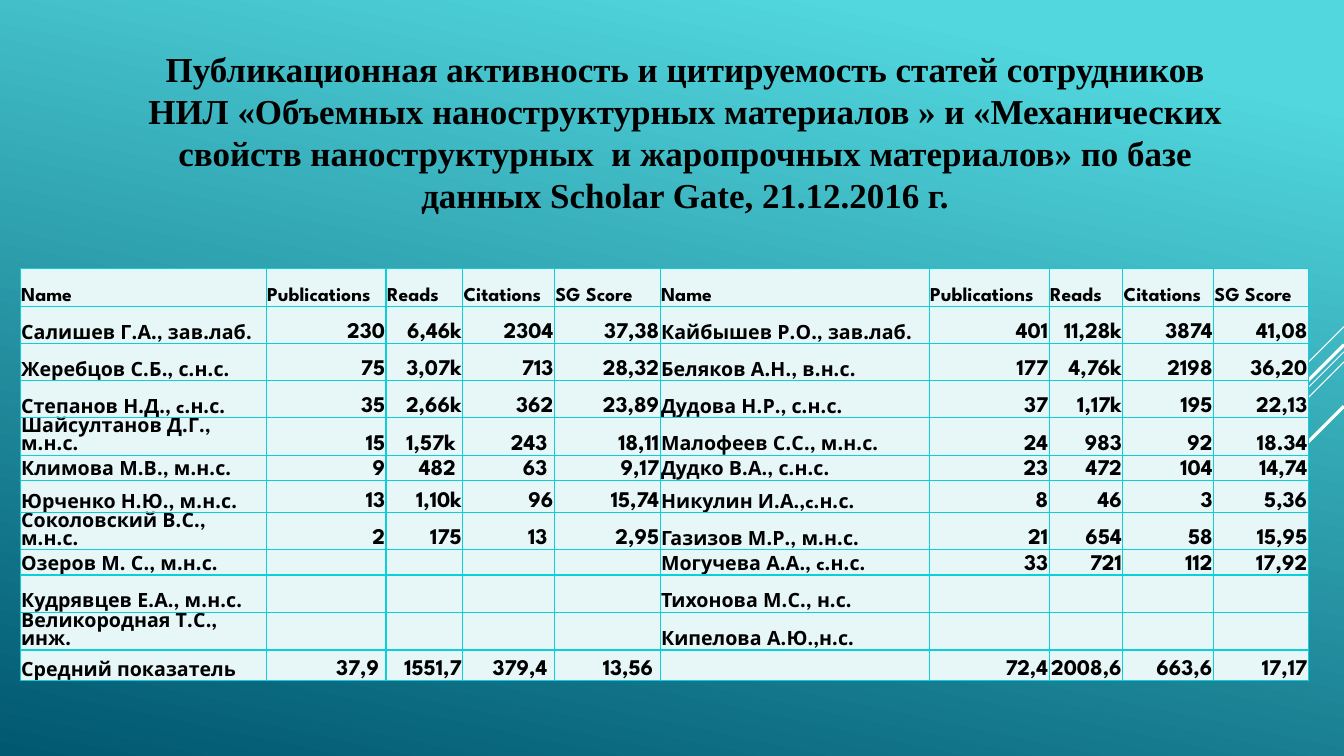
from lxml import etree
from pptx import Presentation
from pptx.dml.color import RGBColor
from pptx.enum import shapes, text
from pptx.oxml import ns
from pptx.util import Pt

COLORS = {
    "sky": "52D7DE",
    "deep": "005870",
    "line": "FFFFFF",
    "text": "000000",
    "cell": "E7F7F8",
    "border": "0BD0D9",
}
TITLE_FONT = "Times New Roman"
TABLE_FONT = "League Spartan"
TITLE = (
    "Публикационная активность и цитируемость статей сотрудников "
    "НИЛ «Объемных наноструктурных материалов » и «Механических "
    "свойств наноструктурных  и жаропрочных материалов» по базе "
    "данных Scholar Gate, 21.12.2016 г."
)
RIGHT_EDGE = 960
# Start height at the right edge, run of the 45° diagonal, line width
DIAGONALS = [
    (233.3, 72, 0.75),
    (251.3, 234.7, 0.75),
    (258.5, 149, 0.75),
    (246.2, 137.5, 2.25),
    (290.2, 100, 2.25),
]
COLUMN_WIDTHS = [175.7, 85.7, 54.7, 65.5, 75.6, 192.2, 85.7, 52.6, 64.8, 67.7]
ROW_HEIGHTS = [27.2, 26.6, 26.6, 26.6, 26.6, 17.9, 23.2, 26, 17.9, 26.6, 27, 21.8]
NAME_COLUMNS = (0, 5)
HEADINGS = ["Name", "Publications", "Reads", "Citations", "SG Score"]
NO_DATA = [""] * 4
ROWS = [
    HEADINGS * 2,
    ["Салишев Г.А., зав.лаб.", "230", "6,46k", "2304", "37,38",
     "Кайбышев Р.О., зав.лаб.", "401", "11,28k", "3874", "41,08"],
    ["Жеребцов С.Б., с.н.с.", "75", "3,07k", "713", "28,32",
     "Беляков А.Н., в.н.с.", "177", "4,76k", "2198", "36,20"],
    ["Степанов Н.Д., c.н.с.", "35", "2,66k", "362", "23,89",
     "Дудова Н.Р., с.н.с.", "37", "1,17k", "195", "22,13"],
    ["Шайсултанов Д.Г., м.н.с.", "15", "1,57k ", "243 ", "18,11",
     "Малофеев С.С., м.н.с.", "24", "983", "92", "18.34"],
    ["Климова М.В., м.н.с.", "9", "482 ", "63 ", "9,17",
     "Дудко В.А., с.н.с.", "23", "472", "104", "14,74"],
    ["Юрченко Н.Ю., м.н.с.", "13", "1,10k", "96", "15,74",
     "Никулин И.А.,c.н.с.", "8", "46", "3", "5,36"],
    ["Соколовский В.С., м.н.с.", "2", "175", "13 ", "2,95",
     "Газизов М.Р., м.н.с.", "21", "654", "58", "15,95"],
    ["Озеров М. С., м.н.с.", *NO_DATA,
     "Могучева А.А., c.н.с.", "33", "721", "112", "17,92"],
    ["Кудрявцев Е.А., м.н.с.", *NO_DATA, "Тихонова М.С., н.с.", *NO_DATA],
    ["Великородная Т.С., инж.", *NO_DATA, "Кипелова А.Ю.,н.с.", *NO_DATA],
    ["Средний показатель", "37,9 ", "1551,7", "379,4 ", "13,56 ",
     "", "72,4", "2008,6", "663,6", "17,17"],
]


def color(name):
    return RGBColor.from_string(COLORS[name])


def format_runs(paragraph, font_name, size):
    for run in paragraph.runs:
        run.font.name = font_name
        run.font.size = Pt(size)
        run.font.bold = True
        run.font.color.rgb = color("text")


def set_background(slide):
    fill = slide.background.fill
    fill.gradient()
    fill.gradient_angle = 258
    for stop, (position, name) in zip(fill.gradient_stops, [(0.1, "sky"), (1, "deep")]):
        stop.position = position
        stop.color.rgb = color(name)


def add_diagonal(slide, top, run, width):
    connector = slide.shapes.add_connector(
        shapes.MSO_CONNECTOR.STRAIGHT,
        Pt(RIGHT_EDGE), Pt(top), Pt(RIGHT_EDGE - run), Pt(top + run),
    )
    connector.line.color.rgb = color("line")
    connector.line.width = Pt(width)
    etree.SubElement(connector._element.spPr, ns.qn("a:effectLst"))


def fill_title(slide):
    title = slide.shapes.title
    title.left, title.top, title.width, title.height = Pt(88.6), Pt(34.6), Pt(801.4), Pt(118.8)
    frame = title.text_frame
    frame.text = TITLE
    frame.word_wrap = True
    frame.auto_size = text.MSO_AUTO_SIZE.NONE
    frame.vertical_anchor = text.MSO_ANCHOR.MIDDLE
    paragraph = frame.paragraphs[0]
    paragraph.alignment = text.PP_ALIGN.CENTER
    format_runs(paragraph, TITLE_FONT, 25)


def set_borders(cell):
    properties = cell._tc.get_or_add_tcPr()
    for index, side in enumerate(("lnL", "lnR", "lnT", "lnB")):
        border = etree.Element(ns.qn(f"a:{side}"), w=str(Pt(1)))
        fill = etree.SubElement(border, ns.qn("a:solidFill"))
        etree.SubElement(fill, ns.qn("a:srgbClr"), val=COLORS["border"])
        properties.insert(index, border)


def fill_cell(cell, value, size, alignment):
    cell.text_frame.text = value
    cell.vertical_anchor = text.MSO_ANCHOR.BOTTOM
    cell.margin_left = cell.margin_right = cell.margin_top = Pt(0.7)
    cell.margin_bottom = 0
    cell.fill.solid()
    cell.fill.fore_color.rgb = color("cell")
    set_borders(cell)
    paragraph = cell.text_frame.paragraphs[0]
    paragraph.alignment = alignment
    format_runs(paragraph, TABLE_FONT, size)
    if not value:
        end = etree.SubElement(paragraph._p, ns.qn("a:endParaRPr"), sz=str(size * 100))
        etree.SubElement(end, ns.qn("a:latin"), typeface=TABLE_FONT)


def add_staff_table(slide):
    frame = slide.shapes.add_table(
        len(ROWS), len(COLUMN_WIDTHS), Pt(14.4), Pt(191.5),
        Pt(sum(COLUMN_WIDTHS)), Pt(sum(ROW_HEIGHTS)),
    )
    table = frame.table
    for column, width in zip(table.columns, COLUMN_WIDTHS):
        column.width = Pt(width)
    for row, height in zip(table.rows, ROW_HEIGHTS):
        row.height = Pt(height)
    for row_index, values in enumerate(ROWS):
        for column_index, value in enumerate(values):
            is_label = row_index == 0 or column_index in NAME_COLUMNS
            size = 14 if is_label or not value else 16
            alignment = text.PP_ALIGN.LEFT if is_label else text.PP_ALIGN.RIGHT
            fill_cell(table.cell(row_index, column_index), value, size, alignment)


def main():
    presentation = Presentation()
    presentation.slide_width = Pt(RIGHT_EDGE)
    presentation.slide_height = Pt(540)
    slide = presentation.slides.add_slide(presentation.slide_layouts[5])
    set_background(slide)
    for diagonal in DIAGONALS:
        add_diagonal(slide, *diagonal)
    fill_title(slide)
    add_staff_table(slide)
    presentation.save("out.pptx")


if __name__ == "__main__":
    main()
